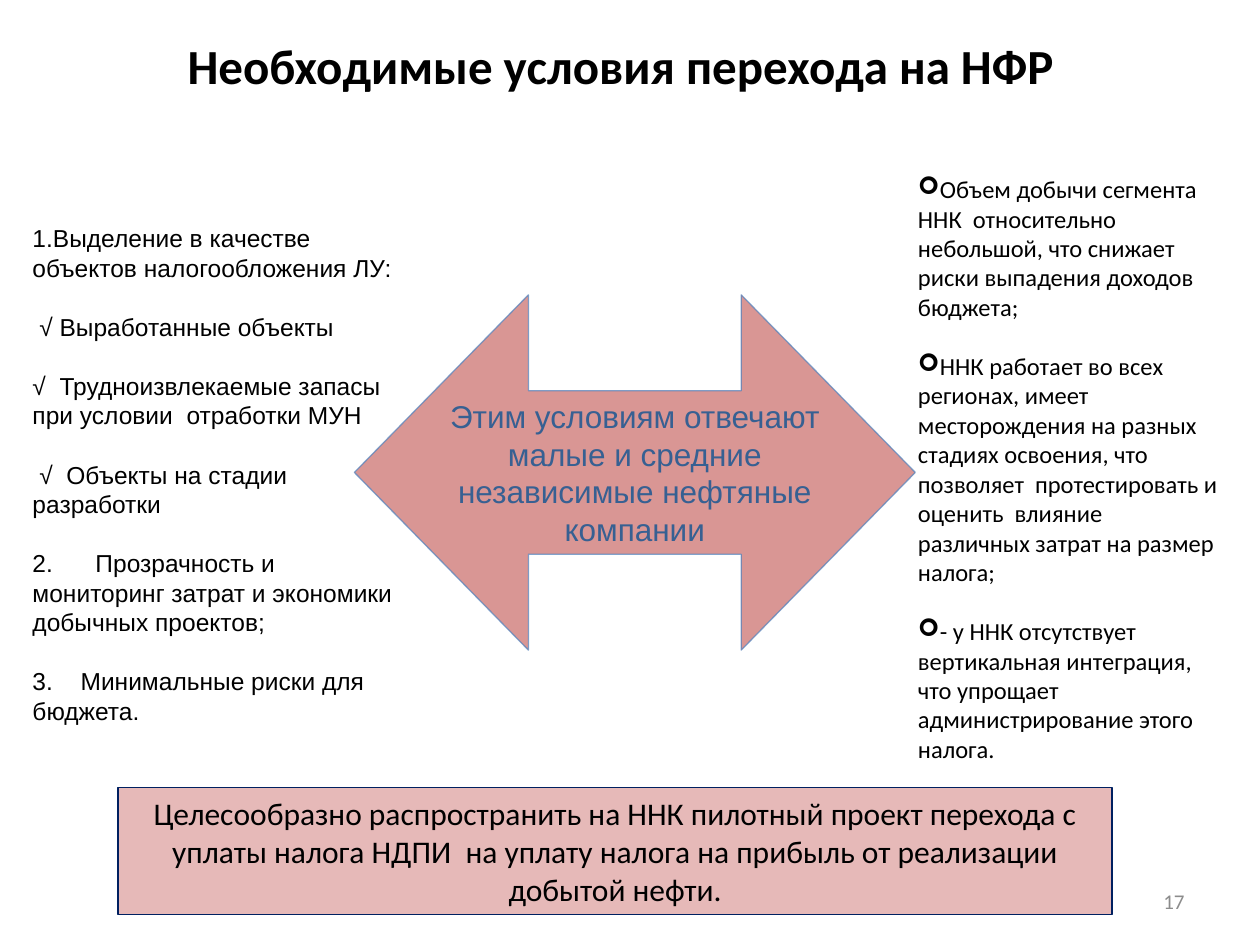
from lxml import etree
from pptx import Presentation
from pptx.dml.color import RGBColor
from pptx.enum.shapes import MSO_SHAPE
from pptx.enum.text import MSO_ANCHOR, PP_ALIGN
from pptx.oxml.ns import qn
from pptx.util import Pt

LEFT, CENTER, RIGHT = PP_ALIGN.LEFT, PP_ALIGN.CENTER, PP_ALIGN.RIGHT
TOP, MIDDLE = MSO_ANCHOR.TOP, MSO_ANCHOR.MIDDLE
RECTANGLE, DOUBLE_ARROW = MSO_SHAPE.RECTANGLE, MSO_SHAPE.LEFT_RIGHT_ARROW

COLORS = {
    "text": "000000", "number": "8C8C8C",
    "arrow": "D99694", "arrow_line": "4F81BD", "arrow_text": "376092",
    "banner": "E6B9B8", "banner_line": "002060",
}
GAP = 17  # one empty line of 14 pt text

# Each condition: text, space before, hanging indent, start number, tab stop
CONDITIONS = [
    ("1.Выделение в качестве объектов налогообложения ЛУ:", 0, 0, None, None),
    (" √ Выработанные объекты", GAP, 0, None, None),
    ("√  Трудноизвлекаемые запасы при условии  отработки МУН", GAP, 0, None, None),
    (" √  Объекты на стадии разработки", GAP, 0, None, None),
    ("Прозрачность и", GAP, 36, 2, None),
    ("мониторинг затрат и экономики", 0, 36, None, None),
    ("добычных проектов;", 0, 36, None, None),
    ("3.\tМинимальные риски для бюджета.", GAP, 0, None, 27.5),
]
REASONS = [
    "Объем добычи сегмента ННК  относительно небольшой, что снижает риски "
    "выпадения доходов бюджета;",
    "ННК работает во всех регионах, имеет  месторождения на разных стадиях "
    "освоения, что позволяет  протестировать и оценить  влияние различных "
    "затрат на размер налога;",
    "- у ННК отсутствует вертикальная интеграция, что упрощает "
    "администрирование этого налога.",
]


def color(name):
    return RGBColor.from_string(COLORS[name])


def prepare_frame(box, anchor):
    frame = box.text_frame
    frame.word_wrap = True
    frame.vertical_anchor = anchor
    return frame


def add_text_box(page, left, top, width, height, anchor=TOP):
    box = page.shapes.add_textbox(Pt(left), Pt(top), Pt(width), Pt(height))
    return prepare_frame(box, anchor)


def add_filled_shape(page, kind, left, top, width, height, fill, line):
    shape = page.shapes.add_shape(kind, Pt(left), Pt(top), Pt(width), Pt(height))
    shape.shadow.inherit = False
    shape.fill.solid()
    shape.fill.fore_color.rgb = color(fill)
    shape.line.color.rgb = color(line)
    shape.line.width = Pt(0.75)
    return shape


def add_paragraph(frame, text, size, font, tint="text", align=LEFT, bold=False, before=0):
    first = frame.paragraphs[0]
    para = frame.add_paragraph() if first.runs else first
    para.alignment = align
    para.space_before = Pt(before)
    span = para.add_run()
    span.text = text
    span.font.size = Pt(size)
    span.font.name = font
    span.font.bold = bold
    span.font.color.rgb = color(tint)
    return para


def add_property(para, tag, **attributes):
    return etree.SubElement(para._p.get_or_add_pPr(), qn(tag), attributes)


def add_conditions(page):
    frame = add_text_box(page, 11.5, 124, 230.5, 296)
    for text, before, hanging, number, tab in CONDITIONS:
        para = add_paragraph(frame, text, 14, "Arial", before=before)
        if hanging:
            properties = para._p.get_or_add_pPr()
            properties.set("marL", str(Pt(hanging)))
            properties.set("indent", str(-Pt(hanging)))
        if number:
            add_property(para, "a:buFont", typeface="+mj-lt")
            add_property(para, "a:buAutoNum", type="arabicPeriod", startAt=str(number))
        if tab:
            stops = add_property(para, "a:tabLst")
            etree.SubElement(stops, qn("a:tab"), pos=str(Pt(tab)), algn="l")


def add_reasons(page):
    frame = add_text_box(page, 517.5, 96, 186, 363.5)
    for index, text in enumerate(REASONS):
        para = add_paragraph(frame, text, 14, "Calibri", before=GAP if index else 0)
        add_property(para, "a:buFont", typeface="Wingdings")
        add_property(para, "a:buChar", char="➢")


def add_arrow(page):
    arrow = add_filled_shape(page, DOUBLE_ARROW, 202.5, 168.5, 320.5, 203,
                             "arrow", "arrow_line")
    arrow.adjustments[0] = 0.46
    arrow.adjustments[1] = 0.49
    line_color = arrow.line._ln.find(".//" + qn("a:srgbClr"))
    etree.SubElement(line_color, qn("a:alpha"), val="69000")
    add_paragraph(prepare_frame(arrow, MIDDLE),
                  "Этим условиям отвечают малые и средние независимые нефтяные компании",
                  18, "Arial", "arrow_text", CENTER)


def add_banner(page):
    banner = add_filled_shape(page, RECTANGLE, 67.5, 450, 568, 72.5,
                              "banner", "banner_line")
    add_paragraph(prepare_frame(banner, MIDDLE),
                  "Целесообразно распространить на ННК пилотный проект перехода с "
                  "уплаты налога НДПИ  на уплату налога на прибыль от реализации "
                  "добытой нефти.", 18, "Calibri", align=CENTER)


def main():
    deck = Presentation()
    deck.slide_width, deck.slide_height = Pt(720), Pt(540)
    page = deck.slides.add_slide(deck.slide_layouts[6])

    # Page number
    number = add_text_box(page, 516, 500.5, 168, 28.5, MIDDLE)
    add_paragraph(number, "17", 12, "Calibri", "number", RIGHT)

    # Conditions on the left, arrow between, reasons on the right
    add_conditions(page)
    add_arrow(page)
    add_reasons(page)

    # Title and conclusion
    title = add_text_box(page, 22.5, 16.5, 664, 41)
    add_paragraph(title, "Необходимые условия перехода на НФР", 28, "Calibri",
                  align=CENTER, bold=True)
    add_banner(page)

    deck.save("out.pptx")


if __name__ == "__main__":
    main()
